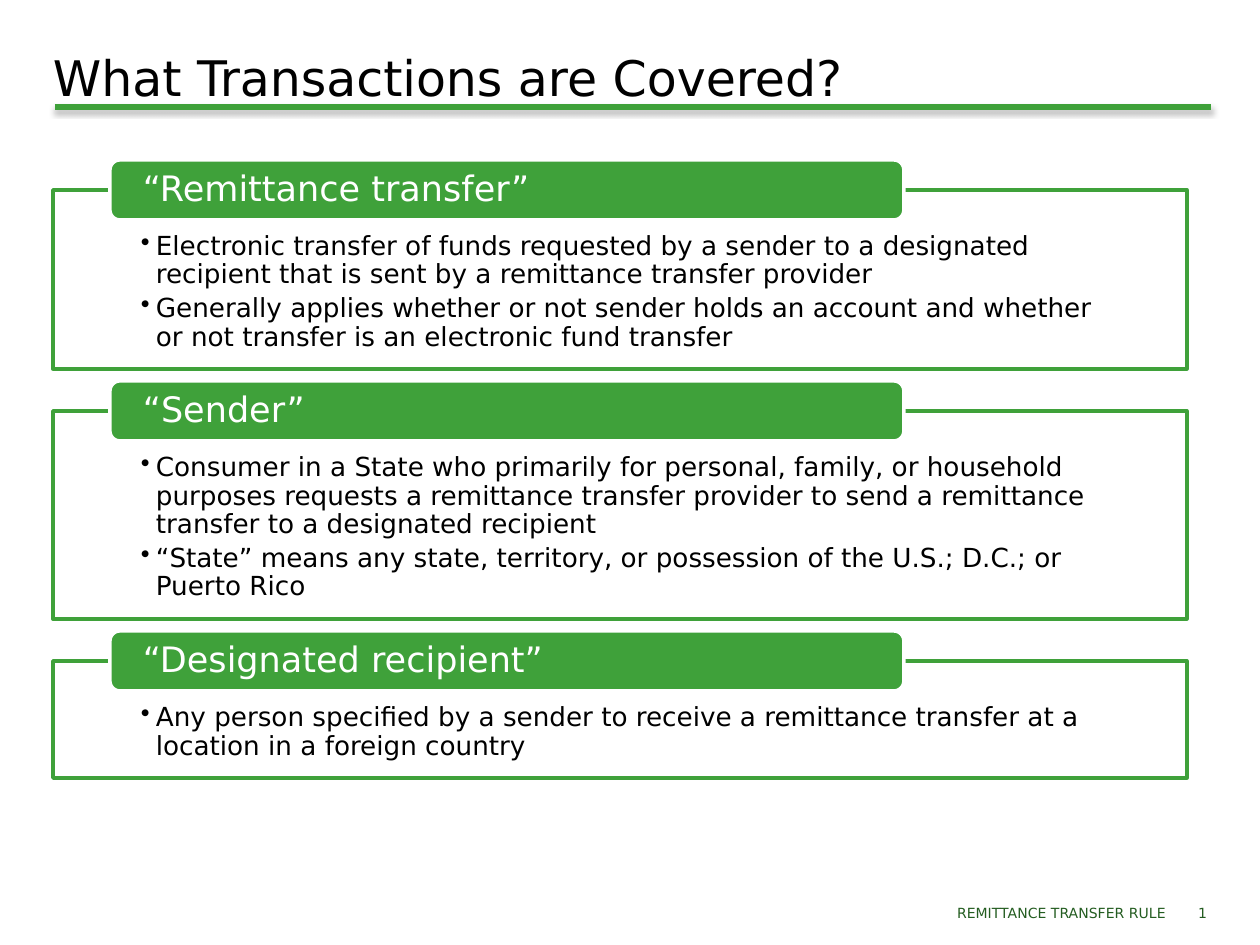
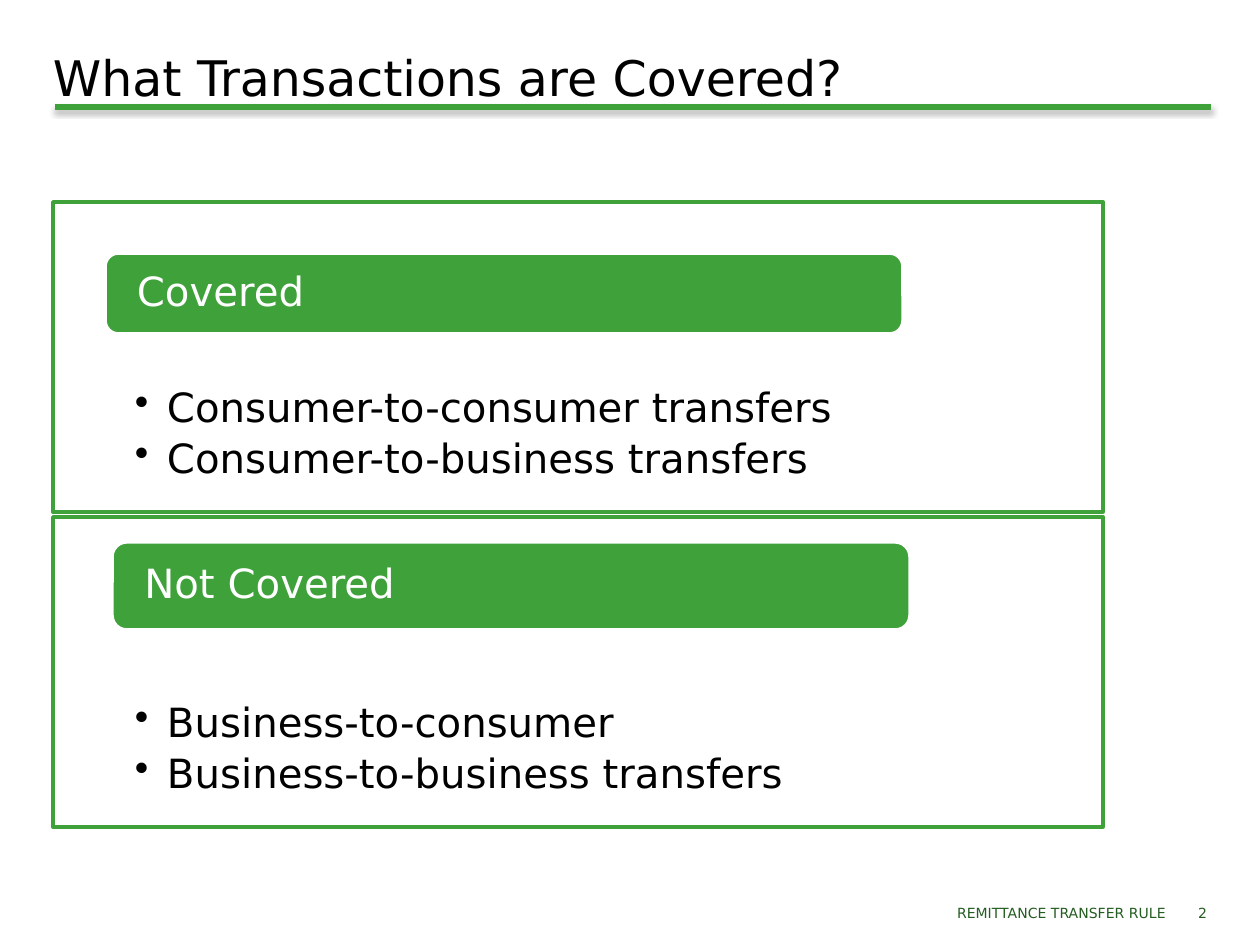
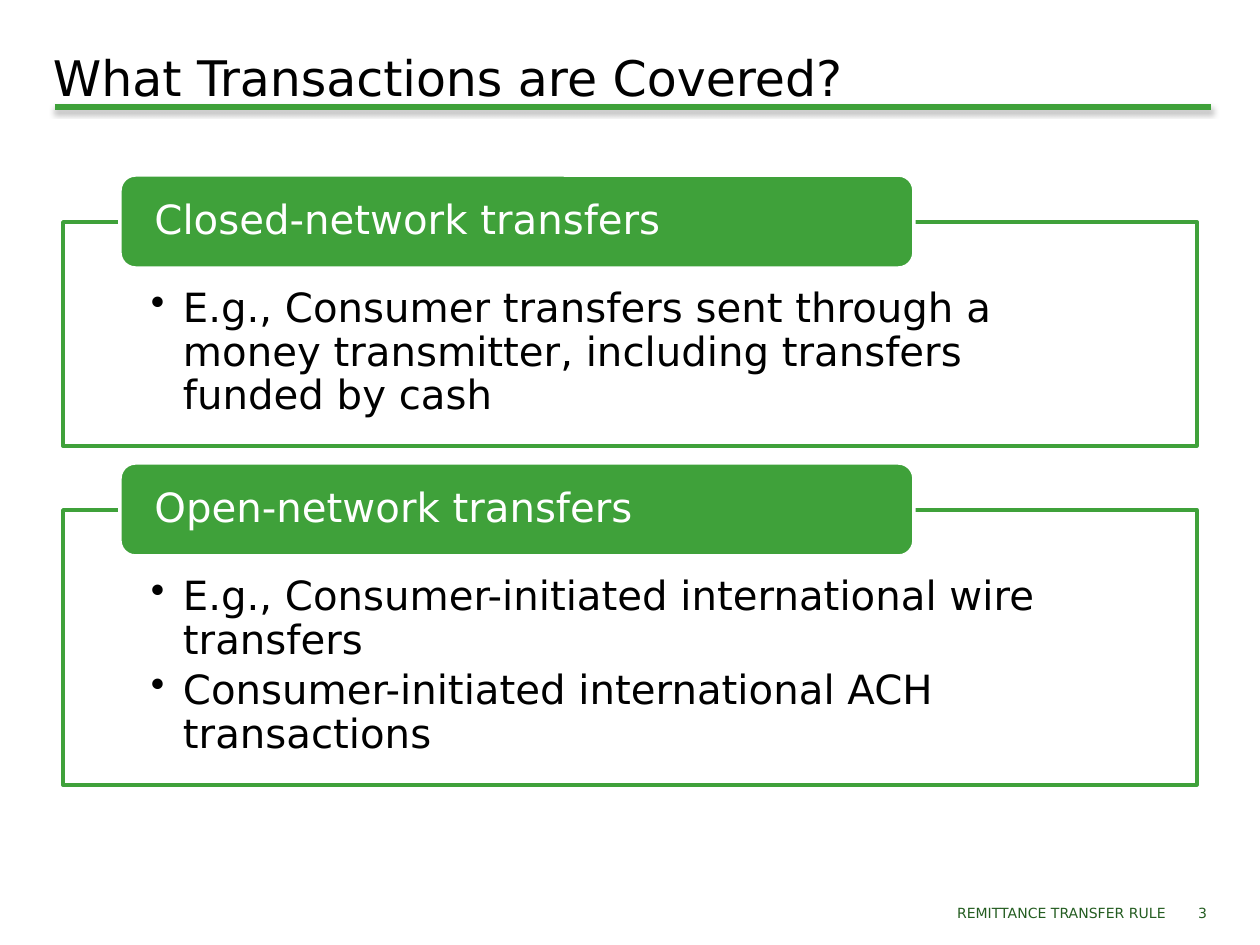
"""Build three slides on the transactions that the remittance rule covers."""
from lxml.etree import SubElement
from pptx import Presentation
from pptx.dml.color import RGBColor as RGB
from pptx.enum.shapes import MSO_CONNECTOR as LINE, MSO_SHAPE as SHAPE
from pptx.enum.text import MSO_ANCHOR as ANCHOR, PP_ALIGN as ALIGN
from pptx.oxml import parse_xml
from pptx.oxml.ns import nsdecls, qn
from pptx.util import Emu, Pt

FONT = "DejaVu Sans"
HUES = {"green": "3FA13A", "dark": "245D21", "black": "000000", "white": "FFFFFF"}
TITLE = "What Transactions are Covered?"
FOOT = "REMITTANCE TRANSFER RULE"

LOW, HIGH = (57, -30, 794, 60), (57, -47, 794, 93)
SLIDES = [
    {"left": 53, "top": 190, "wide": 1134, "gap": 42, "head": 20, "body": 15,
     "hang": 15, "pad": (88, 43, 88, 15), "inset": 30, "cards": [
         (179, LOW, "“Remittance transfer”", [
             "Electronic transfer of funds requested by a sender to a designated "
             "recipient that is sent by a remittance transfer provider",
             "Generally applies whether or not sender holds an account and whether "
             "or not transfer is an electronic fund transfer"]),
         (208, LOW, "“Sender”", [
             "Consumer in a State who primarily for personal, family, or household "
             "purposes requests a remittance transfer provider to send a remittance "
             "transfer to a designated recipient",
             "“State” means any state, territory, or possession of the U.S.; D.C.; "
             "or Puerto Rico"]),
         (117, LOW, "“Designated recipient”", [
             "Any person specified by a sender to receive a remittance transfer at a "
             "location in a foreign country"])]},
    {"left": 53, "top": 202, "wide": 1050, "gap": 5, "head": 23, "body": 23,
     "hang": 32, "pad": (82, 186, 82, 23), "inset": 28, "cards": [
         (310, (52, 51, 798, 81), "Covered", [
             "Consumer-to-consumer transfers", "Consumer-to-business transfers"]),
         (310, (59, 25, 798, 88), "Not Covered", [
             "Business-to-consumer", "Business-to-business transfers"])]},
    {"left": 63, "top": 222, "wide": 1134, "gap": 64, "head": 23, "body": 23,
     "hang": 32, "pad": (88, 66, 88, 23), "inset": 30, "cards": [
         (224, HIGH, "Closed-network transfers", [
             "E.g., Consumer transfers sent through a money transmitter, including "
             "transfers funded by cash"]),
         (275, HIGH, "Open-network transfers", [
             "E.g., Consumer-initiated international wire transfers",
             "Consumer-initiated international ACH transactions"])]},
]


def px(num):
    return Emu(round(num * 914400 / 126))


def hue(name):
    return RGB.from_string(HUES[name])


def write(shape, text, size, color, pad, anchor=ANCHOR.TOP, align=ALIGN.LEFT):
    frame = shape.text_frame
    frame.text = text
    frame.word_wrap = True
    frame.vertical_anchor = anchor
    (frame.margin_left, frame.margin_top,
     frame.margin_right, frame.margin_bottom) = map(px, pad)
    for para in frame.paragraphs:
        para.alignment = align
        for run in para.runs:
            run.font.name, run.font.size = FONT, Pt(size)
            run.font.color.rgb = hue(color)
    return frame.paragraphs


def label(slide, area, *text, **look):
    write(slide.shapes.add_textbox(*map(px, area)), *text, **look)


def block(slide, kind, area, fill, edge):
    shape = slide.shapes.add_shape(kind, *map(px, area))
    shape.shadow.inherit = False
    shape.fill.solid()
    shape.fill.fore_color.rgb = hue(fill)
    shape.line.color.rgb = hue(edge)
    shape.line.width = Pt(2)
    return shape


def bullet(para, size, hang):
    para.level = 1
    para.line_spacing = 0.9
    para.space_after = Pt(round(size * 0.18))
    props = para._p.get_or_add_pPr()
    props.set("marL", str(px(hang)))
    props.set("indent", str(-px(hang)))
    SubElement(props, qn("a:buChar"), char="•")


def frame(slide, num):
    rule = slide.shapes.add_connector(LINE.STRAIGHT, px(55), px(107), px(1211), px(107))
    rule.line.color.rgb = hue("green")
    rule.line.width = Pt(3)
    rule._element.spPr.append(parse_xml(
        f'<a:effectLst {nsdecls("a")}><a:outerShdw blurRad="{Pt(3.1)}" '
        f'dist="{Pt(1.8)}" dir="5400000" rotWithShape="0">'
        f'<a:srgbClr val="{HUES["black"]}"><a:alpha val="35000"/></a:srgbClr>'
        '</a:outerShdw></a:effectLst>'))
    label(slide, (53, 38, 1155, 63), TITLE, 28, "black", (0, 10, 0, 6))
    for left, wide, text in ((809, 357, FOOT), (1169, 38, str(num))):
        label(slide, (left, 876, wide, 50), text, 8, "dark", (0, 5, 0, 5),
              anchor=ANCHOR.BOTTOM, align=ALIGN.RIGHT)


def stack(slide, plan):
    left, top = plan["left"], plan["top"]
    for high, (dx, dy, wide, tall), head, points in plan["cards"]:
        box = block(slide, SHAPE.RECTANGLE, (left, top, plan["wide"], high),
                    "white", "green")
        tint = box._element.spPr.find(qn("a:solidFill"))[0]
        SubElement(tint, qn("a:alpha"), val="90000")
        for para in write(box, "\n".join(points), plan["body"], "black", plan["pad"]):
            bullet(para, plan["body"], plan["hang"])
        tag = block(slide, SHAPE.ROUNDED_RECTANGLE, (left + dx, top + dy, wide, tall),
                    "green", "white")
        side = plan["inset"]
        lines = write(tag, head, plan["head"], "white", (side, 0, side, 0),
                      anchor=ANCHOR.MIDDLE)
        lines[0].line_spacing = 0.9
        top += high + plan["gap"]


def main():
    deck = Presentation()
    deck.slide_width, deck.slide_height = px(1260), px(945)
    for num, plan in enumerate(SLIDES, 1):
        slide = deck.slides.add_slide(deck.slide_layouts[6])
        frame(slide, num)
        stack(slide, plan)
    deck.save("out.pptx")


if __name__ == "__main__":
    main()
